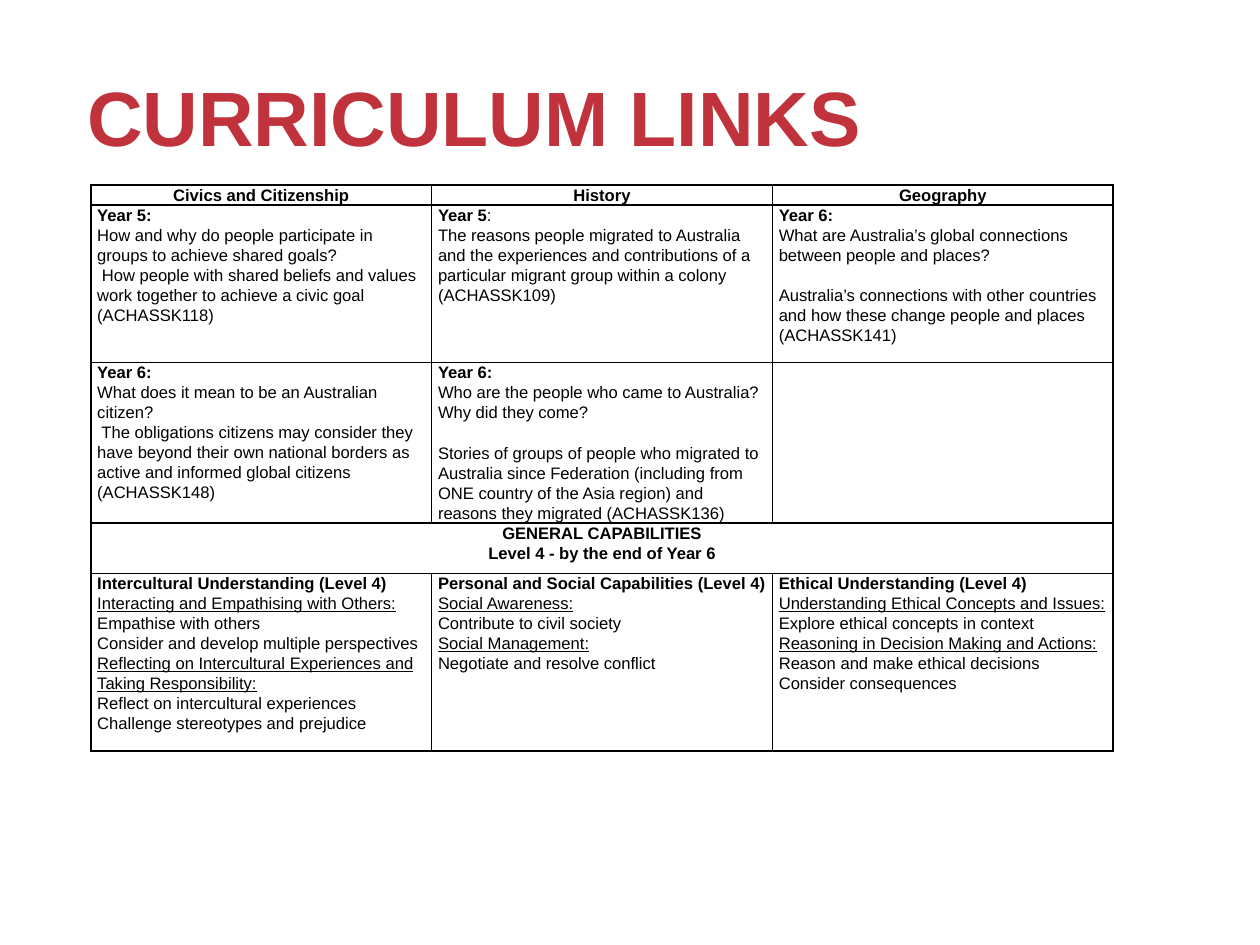
import pptx
import pptx.dml.color
import pptx.enum.text
import pptx.oxml
import pptx.oxml.ns
import pptx.util
from pptx.util import Cm, Pt

ALIGN = pptx.enum.text.PP_ALIGN
TEXT_SIZE = 9.5
BLANK_LINE = 11.7
COLUMN_WIDTH = 6.87
ROW_HEIGHTS = [0.4, 3.17, 3.17, 1.02, 3.58]

BOLD = {"bold": True}
CENTRED = {"bold": True, "align": ALIGN.CENTER}
PLAIN = {}
UNDERLINED = {"underline": True}
AFTER_GAP = {"space_before": BLANK_LINE}
SAME_LINE = {"new_paragraph": False}

# Each cell is a list of (text, format) pairs.
ROWS = [
    [
        [("Civics and Citizenship", CENTRED)],
        [("History", CENTRED)],
        [("Geography", CENTRED)],
    ],
    [
        [("Year 5:", BOLD),
         ("How and why do people participate in groups to achieve shared goals?", PLAIN),
         (" How people with shared beliefs and values work together to achieve "
          "a civic goal (ACHASSK118)", PLAIN)],
        [("Year 5", BOLD),
         (":", SAME_LINE),
         ("The reasons people migrated to Australia and the experiences and "
          "contributions of a particular migrant group within a colony (ACHASSK109)", PLAIN)],
        [("Year 6:", BOLD),
         ("What are Australia’s global connections between people and places?", PLAIN),
         ("Australia’s connections with other countries and how these change "
          "people and places (ACHASSK141)", AFTER_GAP)],
    ],
    [
        [("Year 6:", BOLD),
         ("What does it mean to be an Australian citizen?", PLAIN),
         (" The obligations citizens may consider they have beyond their own national "
          "borders as active and informed global citizens (ACHASSK148)", PLAIN)],
        [("Year 6:", BOLD),
         ("Who are the people who came to Australia? Why did they come?", PLAIN),
         ("Stories of groups of people who migrated to Australia since Federation "
          "(including from ONE country of the Asia region) and reasons they migrated "
          "(ACHASSK136)", AFTER_GAP)],
        [],
    ],
    [
        [("GENERAL CAPABILITIES", CENTRED),
         ("Level 4 - by the end of Year 6", CENTRED)],
        [],
        [],
    ],
    [
        [("Intercultural Understanding (Level 4)", BOLD),
         ("Interacting and Empathising with Others:", UNDERLINED),
         ("Empathise with others", PLAIN),
         ("Consider and develop multiple perspectives", PLAIN),
         ("Reflecting on Intercultural Experiences and Taking Responsibility:", UNDERLINED),
         ("Reflect on intercultural experiences", PLAIN),
         ("Challenge stereotypes and prejudice", PLAIN)],
        [("Personal and Social Capabilities (Level 4)", BOLD),
         ("Social Awareness:", UNDERLINED),
         ("Contribute to civil society", PLAIN),
         ("Social Management:", UNDERLINED),
         ("Negotiate and resolve conflict", PLAIN)],
        [("Ethical Understanding (Level 4)", BOLD),
         ("Understanding Ethical Concepts and Issues:", UNDERLINED),
         ("Explore ethical concepts in context", PLAIN),
         ("Reasoning in Decision Making and Actions:", UNDERLINED),
         ("Reason and make ethical decisions", PLAIN),
         ("Consider consequences", PLAIN)],
    ],
]
CAPABILITIES_ROW = 3


def rgb(colour):
    return pptx.dml.color.RGBColor.from_string(colour)


def add_text(frame, text, size=TEXT_SIZE, colour="000000", bold=False, underline=False,
             align=ALIGN.LEFT, line_spacing=1.07, space_before=0, new_paragraph=True):
    """Add text to the frame, using its last paragraph if that is still empty."""
    paragraph = frame.paragraphs[-1]
    if new_paragraph:
        if paragraph.runs:
            paragraph = frame.add_paragraph()
        paragraph.alignment = align
        paragraph.line_spacing = line_spacing
        paragraph.space_before = Pt(space_before)
    run = paragraph.add_run()
    run.text = text
    run.font.name = "Arial"
    run.font.size = Pt(size)
    run.font.bold = bold
    run.font.underline = underline
    run.font.color.rgb = rgb(colour)


def add_borders(cell, colour="000000", width=1):
    properties = cell._tc.get_or_add_tcPr()
    for side in ("lnL", "lnR", "lnT", "lnB"):
        properties.append(pptx.oxml.parse_xml(
            f'<a:{side} {pptx.oxml.ns.nsdecls("a")} w="{Pt(width)}">'
            f'<a:solidFill><a:srgbClr val="{colour}"/></a:solidFill></a:{side}>'))


def fill_cell(cell, lines):
    cell.margin_left = cell.margin_right = Cm(0.13)
    cell.margin_top = cell.margin_bottom = 0
    add_borders(cell)
    cell.fill.solid()
    cell.fill.fore_color.rgb = rgb("FFFFFF")
    for text, text_format in lines:
        add_text(cell.text_frame, text, **text_format)


def add_title(slide, text):
    title = slide.shapes.title
    title.left, title.top, title.width, title.height = Cm(1.5), Cm(1.14), Cm(22.1), Cm(2.82)
    title.text_frame.vertical_anchor = pptx.enum.text.MSO_ANCHOR.TOP
    title.text_frame.margin_top = Cm(0.27)
    add_text(title.text_frame, text, size=44, colour="C1333C", bold=True, line_spacing=1.0)


def add_curriculum_table(slide):
    column_count = len(ROWS[0])
    table = slide.shapes.add_table(
        len(ROWS), column_count, Cm(1.83), Cm(3.73),
        Cm(COLUMN_WIDTH * column_count), Cm(sum(ROW_HEIGHTS))).table
    for column in table.columns:
        column.width = Cm(COLUMN_WIDTH)
    for row, height in zip(table.rows, ROW_HEIGHTS):
        row.height = Cm(height)
    table.cell(CAPABILITIES_ROW, 0).merge(table.cell(CAPABILITIES_ROW, column_count - 1))
    for row, contents in zip(table.rows, ROWS):
        for cell, lines in zip(row.cells, contents):
            fill_cell(cell, lines)


def main():
    presentation = pptx.Presentation()
    presentation.slide_width, presentation.slide_height = Cm(25.4), Cm(19.05)
    slide = presentation.slides.add_slide(presentation.slide_layouts.get_by_name("Title Only"))
    add_title(slide, "CURRICULUM LINKS")
    add_curriculum_table(slide)
    presentation.save("out.pptx")


if __name__ == "__main__":
    main()
